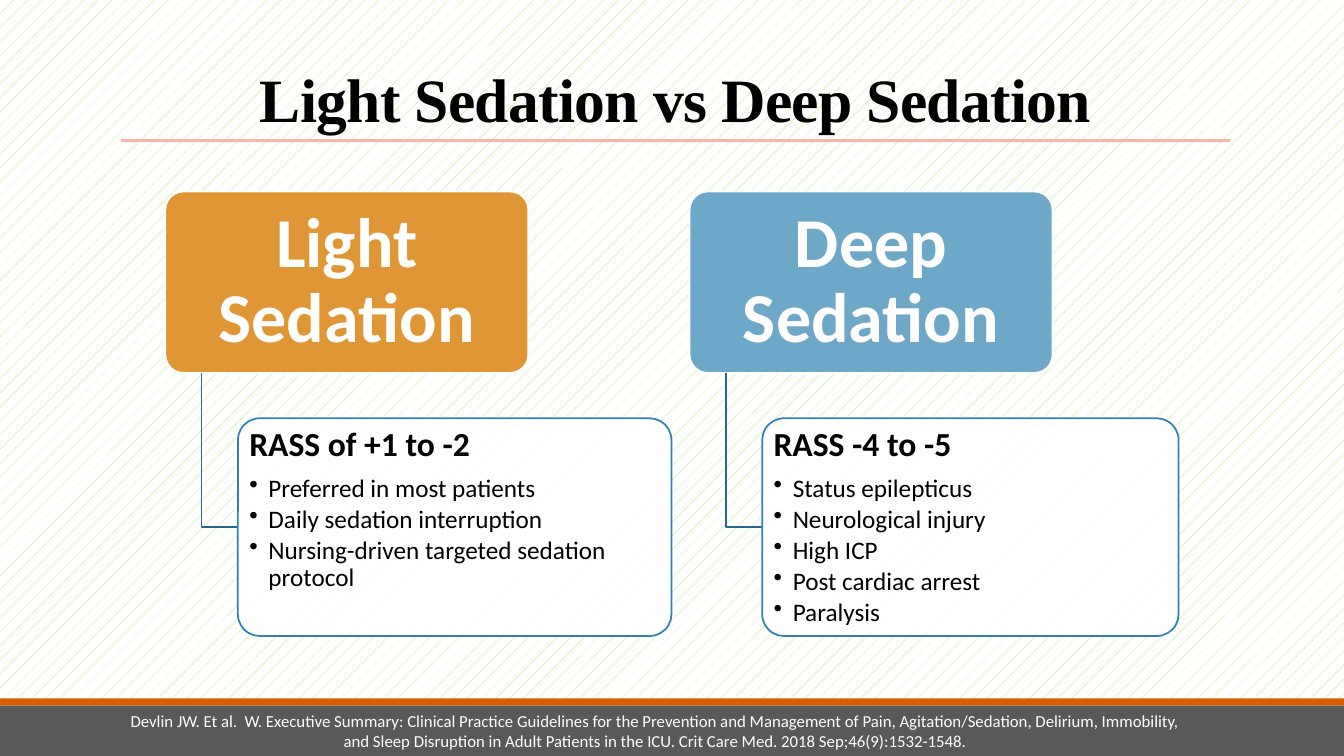
"""Build the slide that compares light and deep sedation."""
import pptx
import pptx.util
import pptx.dml.color
import pptx.enum.dml
import pptx.enum.shapes
import pptx.enum.text
import pptx.oxml
import pptx.oxml.ns
import lxml.etree

Inches = pptx.util.Inches
Pt = pptx.util.Pt
KIND = pptx.enum.shapes.MSO_SHAPE
ALIGN = pptx.enum.text.PP_ALIGN
ANCHOR = pptx.enum.text.MSO_ANCHOR
qn = pptx.oxml.ns.qn

SOURCE = (
    "Devlin JW. Et al.  W. Executive Summary: Clinical Practice Guidelines for the "
    "Prevention and Management of Pain, Agitation/Sedation, Delirium, Immobility, and "
    "Sleep Disruption in Adult Patients in the ICU. Crit Care Med. 2018 Sep;46(9):1532-1548."
)
GROUPS = [
    ("Light Sedation", "E09634", 1.64, 4.3, "RASS of +1 to -2",
     ["Preferred in most patients", "Daily sedation interruption",
      "Nursing-driven targeted sedation protocol"]),
    ("Deep Sedation", "6EA8C8", 6.84, 4.13, "RASS -4 to -5",
     ["Status epilepticus", "Neurological injury", "High ICP",
      "Post cardiac arrest", "Paralysis"]),
]


def rgb(code):
    """Turn a hex string into a colour."""
    return pptx.dml.color.RGBColor.from_string(code)


def style(para, size, color, bold=False, face="Calibri", align=ALIGN.LEFT):
    """Set the font and alignment of a paragraph."""
    para.alignment = align
    para.font.name = face
    para.font.size = Pt(size)
    para.font.bold = bold
    para.font.color.rgb = rgb(color)


def space(para, after):
    """Set tight line spacing and the gap after a paragraph."""
    para.line_spacing = 0.9
    para.space_before = Pt(0)
    para.space_after = Pt(after)


def bullet(para):
    """Give a paragraph a hanging bullet."""
    props = para._p.get_or_add_pPr()
    props.set("marL", str(Inches(0.19)))
    props.set("indent", str(-Inches(0.19)))
    lxml.etree.SubElement(props, qn("a:buChar")).set("char", "•")


def block(slide, kind, left, top, width, height, fill, line=None):
    """Add a filled shape with an optional outline."""
    shape = slide.shapes.add_shape(
        kind, Inches(left), Inches(top), Inches(width), Inches(height))
    shape.shadow.inherit = False
    shape.fill.solid()
    shape.fill.fore_color.rgb = rgb(fill)
    if line:
        shape.line.color.rgb = rgb(line)
        shape.line.width = Pt(1.25)
    else:
        shape.line.fill.background()
    return shape


def card(slide, left, top, width, height, fill, line, side, edge, anchor):
    """Add a rounded box ready for text and return its shape."""
    shape = block(slide, KIND.ROUNDED_RECTANGLE, left, top, width, height, fill, line)
    shape.adjustments[0] = 0.1
    frame = shape.text_frame
    frame.word_wrap = True
    frame.vertical_anchor = anchor
    frame.margin_left = frame.margin_right = Inches(side)
    frame.margin_top = frame.margin_bottom = Inches(edge)
    return shape


def elbow(slide, left, top, right, bottom):
    """Draw the bent line from a heading to its details."""
    pen = slide.shapes.build_freeform(Inches(left), Inches(top))
    pen.add_line_segments(
        [(Inches(left), Inches(bottom)), (Inches(right), Inches(bottom))], close=False)
    shape = pen.convert_to_shape()
    shape.shadow.inherit = False
    shape.fill.background()
    shape.line.color.rgb = rgb("26698C")
    shape.line.width = Pt(1.25)


def group(slide, name, color, left, width, score, items):
    """Add a heading box, its bent line and its details box."""
    head = card(slide, left, 1.9, 3.6, 1.8, color, "FFFFFF", 0.1, 0.07, ANCHOR.MIDDLE)
    para = head.text_frame.paragraphs[0]
    para.text = name
    space(para, 0)
    style(para, 50, "FFFFFF", True, align=ALIGN.CENTER)

    elbow(slide, left + 0.36, 3.7, left + 0.72, 5.23)

    body = card(slide, left + 0.72, 4.15, width, 2.16, "FFFFFF", "3083AF",
                0.05, 0.03, ANCHOR.TOP)
    tint = body.fill._xPr.find(qn("a:solidFill"))[0]
    lxml.etree.SubElement(tint, qn("a:alpha")).set("val", "90000")
    para = body.text_frame.paragraphs[0]
    para.text = score
    space(para, 8.4)
    style(para, 24, "000000", True)
    for item in items:
        para = body.text_frame.add_paragraph()
        para.text = item
        para.level = 1
        space(para, 2.7)
        bullet(para)
        style(para, 18, "000000")


def heading(slide, text):
    """Place the title and the rule under it."""
    title = slide.shapes.title
    title.left, title.top = Inches(1.2), Inches(0.31)
    title.width, title.height = Inches(11), Inches(1.08)
    frame = title.text_frame
    frame.text = text
    frame.auto_size = pptx.enum.text.MSO_AUTO_SIZE.NONE
    frame.vertical_anchor = ANCHOR.BOTTOM
    para = frame.paragraphs[0]
    para.line_spacing = 0.85
    style(para, 44, "000000", True, "Times New Roman", ALIGN.CENTER)
    para.runs[0]._r.get_or_add_rPr().set("spc", "-50")

    rule = slide.shapes.add_connector(
        pptx.enum.shapes.MSO_CONNECTOR.STRAIGHT,
        Inches(1.2), Inches(1.39), Inches(12.2), Inches(1.39))
    rule.line.color.rgb = rgb("F9B3A7")
    rule.line.width = Pt(2.25)
    lxml.etree.SubElement(rule._element.spPr, qn("a:effectLst"))


def footer(slide, text):
    """Add the bottom bands and the reference."""
    block(slide, KIND.RECTANGLE, 0, 7, 13.33, 0.5, "595959")
    block(slide, KIND.RECTANGLE, 0, 6.93, 13.33, 0.07, "D85C00")
    box = slide.shapes.add_textbox(Inches(1.06), Inches(7), Inches(10.88), Inches(0.5))
    box.text_frame.word_wrap = True
    para = box.text_frame.paragraphs[0]
    para.text = text
    style(para, 12, "FFFFFF", align=ALIGN.CENTER)


def main():
    """Build and save the slide."""
    deck = pptx.Presentation()
    deck.slide_width, deck.slide_height = Inches(13.33), Inches(7.5)
    slide = deck.slides.add_slide(deck.slide_layouts[5])
    back = slide.background.fill
    back.patterned()
    back.pattern = pptx.enum.dml.MSO_PATTERN.PERCENT_5
    back.fore_color.rgb = rgb("A7EA52")
    back.back_color.rgb = rgb("FFFFFF")
    heading(slide, "Light Sedation vs Deep Sedation")
    for entry in GROUPS:
        group(slide, *entry)
    footer(slide, SOURCE)
    deck.save("out.pptx")


if __name__ == "__main__":
    main()
